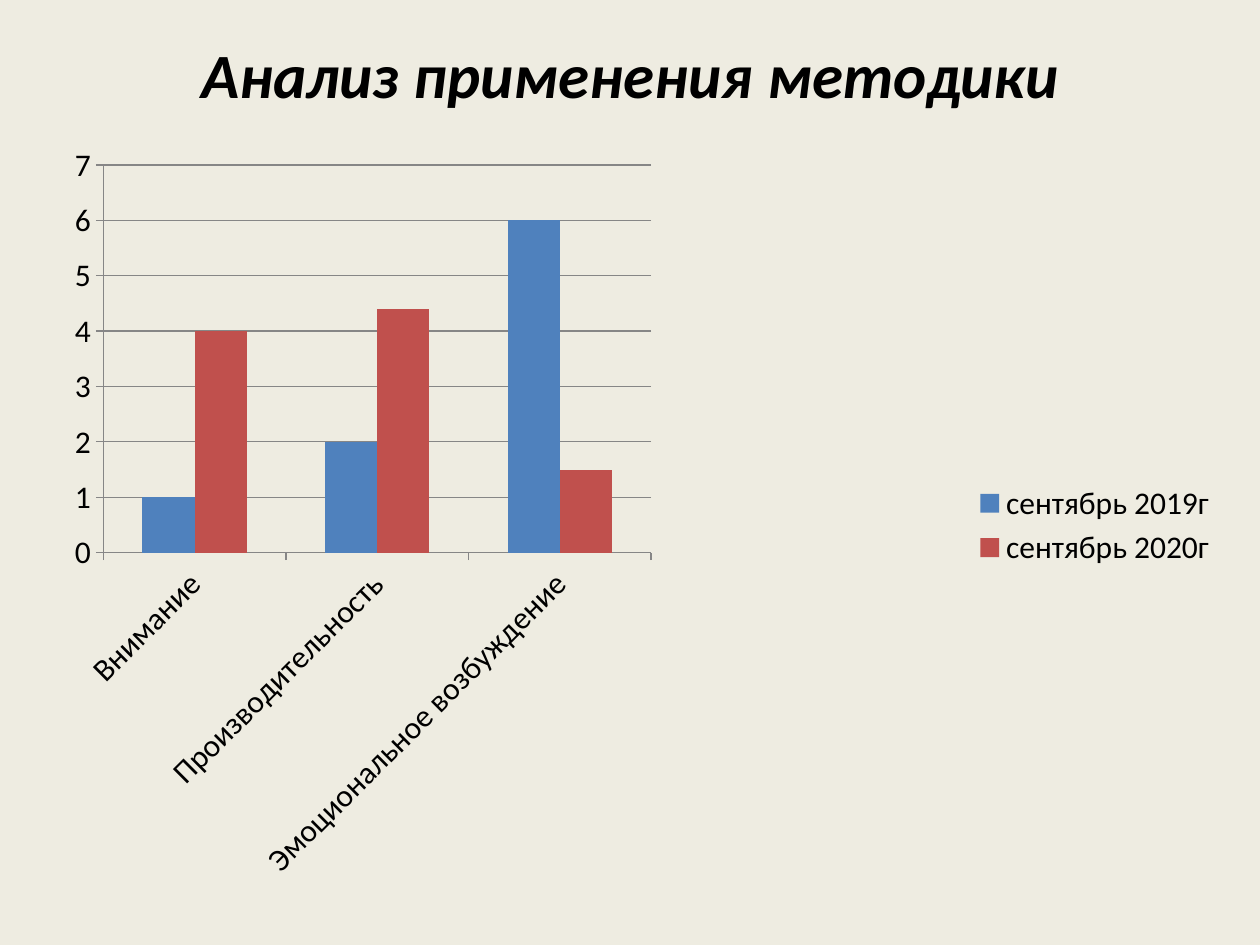
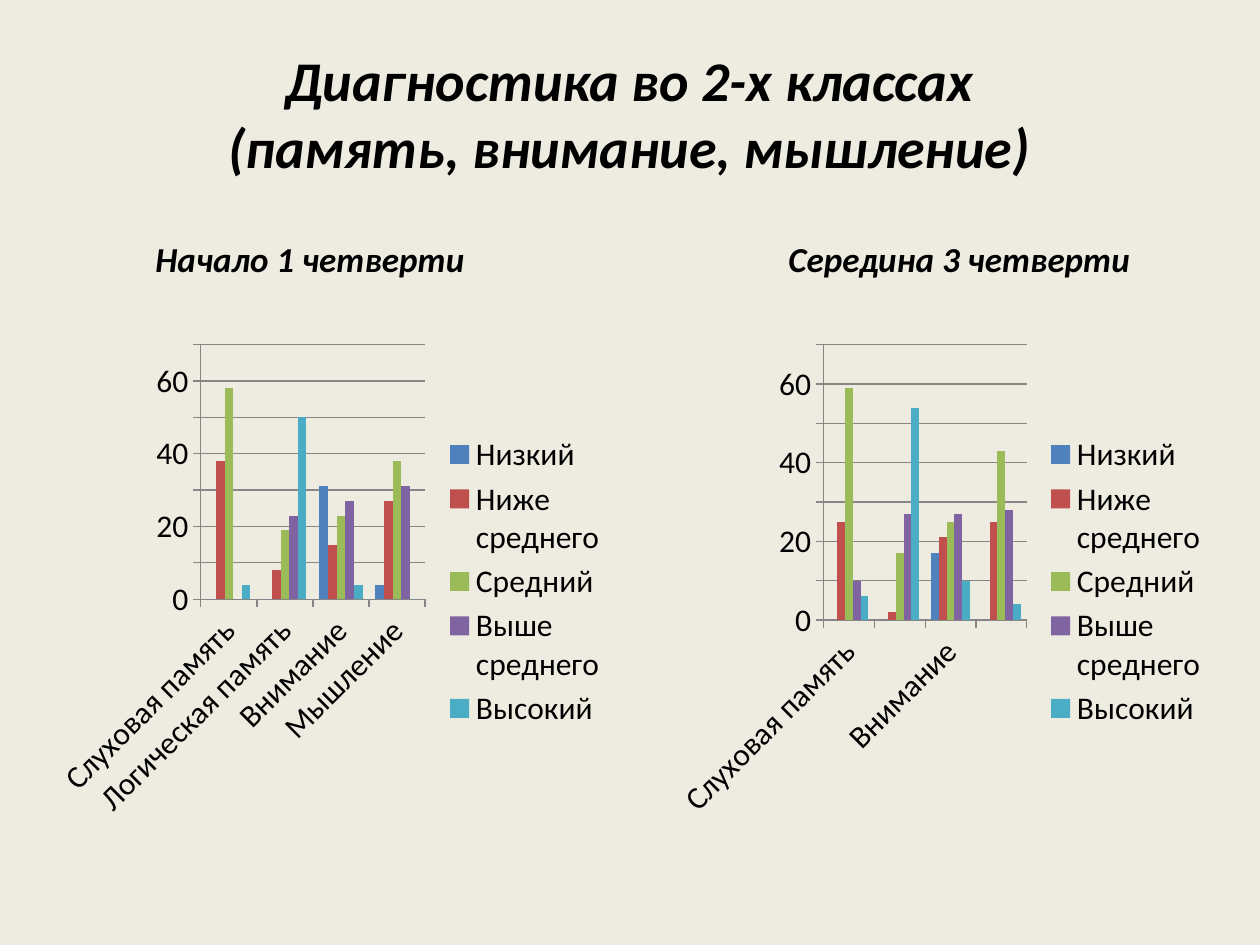
from lxml.etree import SubElement
from pptx import Presentation
from pptx.chart.data import CategoryChartData
from pptx.dml.color import RGBColor
from pptx.enum.chart import XL_CHART_TYPE as CT, XL_LEGEND_POSITION as LP, XL_TICK_MARK as TM
from pptx.enum.text import PP_ALIGN as AL
from pptx.oxml.ns import qn
from pptx.util import Pt

EMU_PER_PX = 914400 / 126


def px(n):
    return round(n * EMU_PER_PX)


def rgb(h):
    return RGBColor.from_string(h)


class Deck:
    FONT, INK, PAPER, LINE = "Calibri", "000000", "EEECE1", "868686"
    SERIES = ["4F81BD", "C0504D", "9BBB59", "8064A2", "4BACC6"]

    def __init__(self):
        self.prs = Presentation()
        self.prs.slide_width, self.prs.slide_height = px(1260), px(945)
        self.s = None

    def slide(self):
        self.s = self.prs.slides.add_slide(self.prs.slide_layouts[6])
        fill = self.s.background.fill
        fill.solid()
        fill.fore_color.rgb = rgb(self.PAPER)

    def run(self, p, text, size):
        r = p.add_run()
        r.text = text
        f = r.font
        f.name, f.size, f.bold, f.italic = self.FONT, Pt(size), True, True
        f.color.rgb = rgb(self.INK)

    def title(self, x, y, w, h, lines, size):
        tf = self.s.shapes.add_textbox(px(x), px(y), px(w), px(h)).text_frame
        tf.word_wrap = True
        for i, line in enumerate(lines):
            p = tf.add_paragraph() if i else tf.paragraphs[0]
            p.alignment = AL.CENTER
            self.run(p, line, size)
        return tf

    def headings(self, tf, items, size, before):
        """One line of headings, each at its own tab stop."""
        p = tf.add_paragraph()
        p.alignment, p.space_before = AL.LEFT, Pt(before)
        tabs = SubElement(p._p.get_or_add_pPr(), qn("a:tabLst"))
        for pos, text in items:
            SubElement(tabs, qn("a:tab"), pos=str(px(pos)), algn="l")
            self.run(p, "\t" + text, size)

    def chart(self, x, y, w, h, cats, series, plot=None):
        data = CategoryChartData()
        data.categories = cats
        for name, vals in series.items():
            data.add_series(name, vals)
        ch = self.s.shapes.add_chart(CT.COLUMN_CLUSTERED, px(x), px(y), px(w), px(h), data).chart
        ch.has_title = False
        ch.font.name, ch.font.size = self.FONT, Pt(18)
        ch.font.color.rgb = rgb(self.INK)
        ch.has_legend = True
        ch.legend.position, ch.legend.include_in_layout = LP.RIGHT, False
        # Axes and grid
        ch.value_axis.has_major_gridlines = True
        lines = [ch.value_axis.major_gridlines.format.line]
        for axis in (ch.category_axis, ch.value_axis):
            axis.major_tick_mark, axis.minor_tick_mark = TM.OUTSIDE, TM.NONE
            lines.append(axis.format.line)
        for line in lines:
            line.color.rgb, line.width = rgb(self.LINE), Pt(0.75)
        # Columns
        bars = ch.plots[0]
        bars.vary_by_categories, bars.gap_width, bars.overlap = False, 150, 0
        for ser, color in zip(bars.series, self.SERIES):
            ser.format.fill.solid()
            ser.format.fill.fore_color.rgb = rgb(color)
            ser.invert_if_negative = False
        if plot:
            self.place_plot(ch, plot)

    def place_plot(self, ch, plot):
        area = ch._chartSpace.chart.plotArea
        for old in area.findall(qn("c:layout")):
            area.remove(old)
        layout = SubElement(area, qn("c:layout"))
        area.insert(0, layout)
        manual = SubElement(layout, qn("c:manualLayout"))
        values = ["inner", "edge", "edge", *plot]
        for tag, v in zip(["layoutTarget", "xMode", "yMode", "x", "y", "w", "h"], values):
            SubElement(manual, qn("c:" + tag), val=str(v))


def main():
    d = Deck()

    # Results of the method
    d.slide()
    d.title(0, 29, 1260, 89, ["Анализ применения методики"], 36)
    d.chart(39, 137, 1191, 777,
            ["Внимание", "Производительность", "Эмоциональное возбуждение"],
            {"сентябрь 2019г": [1, 2, 6], "сентябрь 2020г": [4, 4.4, 1.5]},
            plot=(0.054, 0.036, 0.46, 0.499))

    # Second-grade diagnostics: two periods side by side
    d.slide()
    tf = d.title(29, 39, 1201, 318,
                 ["Диагностика во 2-х классах", "(память, внимание, мышление)"], 32)
    d.headings(tf, [(114, "Начало 1 четверти"), (747, "Середина 3 четверти")], 20, 33)
    skills = ["Слуховая память", "Логическая память", "Внимание", "Мышление"]
    levels = ["Низкий", "Ниже среднего", "Средний", "Выше среднего", "Высокий"]
    start = [[0, 0, 31, 4], [38, 8, 15, 27], [58, 19, 23, 38], [0, 23, 27, 31], [4, 50, 4, 0]]
    middle = [[0, 0, 17, 0], [25, 2, 21, 25], [59, 17, 25, 43], [10, 27, 27, 28], [6, 54, 10, 4]]
    for x, w, vals in [(49, 571, start), (669, 552, middle)]:
        d.chart(x, 335, w, 493, skills, dict(zip(levels, vals)))

    d.prs.save("out.pptx")


if __name__ == "__main__":
    main()
